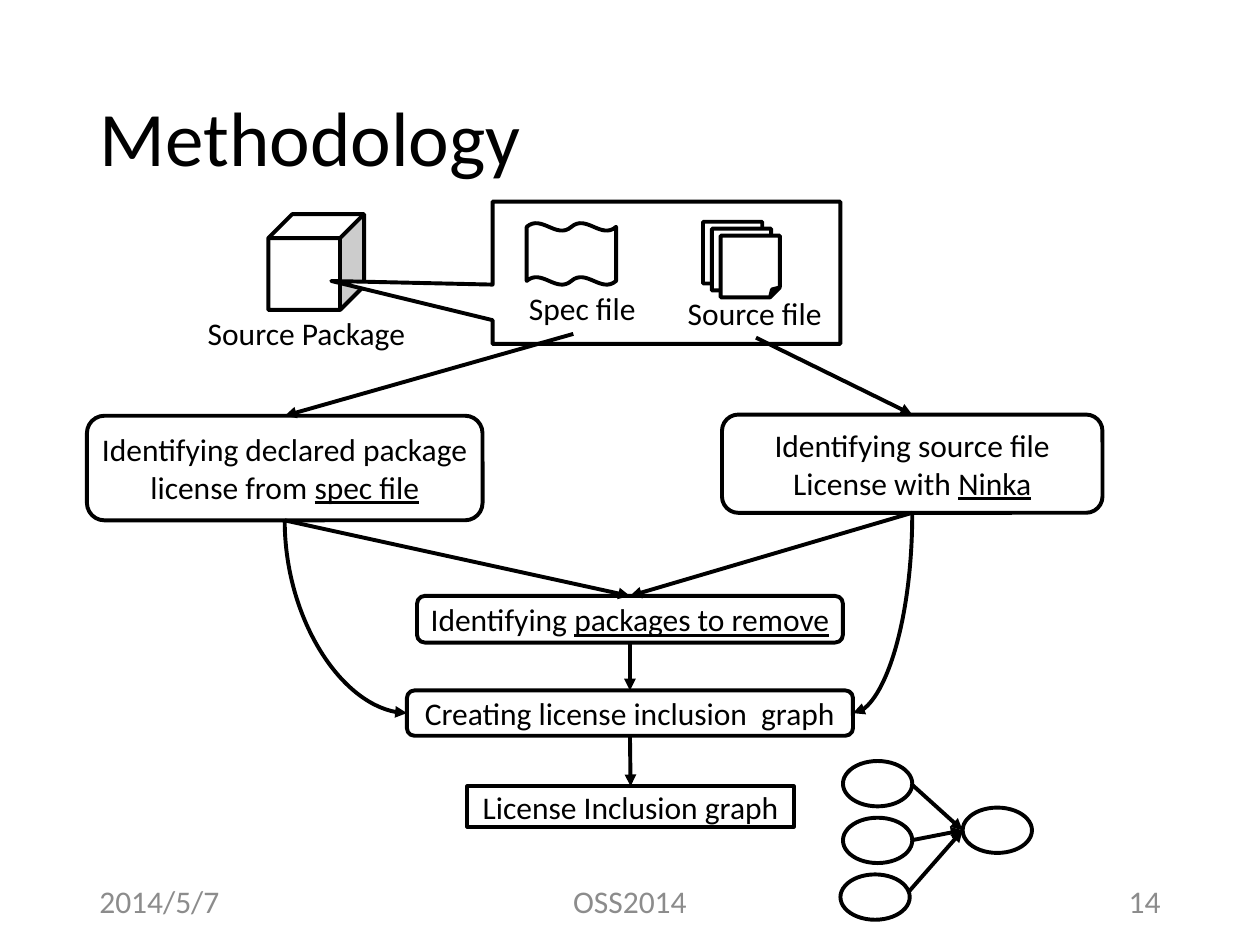
"""Builds the Methodology flow slide: from package files to a license inclusion graph."""
from lxml.etree import SubElement
from pptx import Presentation
from pptx.dml.color import RGBColor
from pptx.enum.shapes import MSO_CONNECTOR as CN, MSO_SHAPE as SH
from pptx.enum.text import MSO_ANCHOR, MSO_AUTO_SIZE, PP_ALIGN
from pptx.oxml.ns import qn
from pptx.util import Inches, Pt

FONT, BLACK, WHITE, GRAY = "Calibri", "000000", "FFFFFF", "8C8C8C"
LEFT, CENTER, RIGHT = PP_ALIGN.LEFT, PP_ALIGN.CENTER, PP_ALIGN.RIGHT
rgb = RGBColor.from_string

prs = Presentation()
prs.slide_width, prs.slide_height = Inches(10), Inches(7.5)
COL, ROW = prs.slide_width / 100, prs.slide_height / 75
slide = prs.slides.add_slide(prs.slide_layouts[5])
shapes = slide.shapes


def box(kind, place, lines=(), fill=WHITE, color=BLACK, align=CENTER):
    """Add a shape, or a text box if kind is None; text after an underscore is underlined."""
    x, y, w, h = place
    area = [int(v) for v in (x * COL, y * ROW, w * COL, h * ROW)]
    s = shapes.add_textbox(*area) if kind is None else shapes.add_shape(kind, *area)
    tf = s.text_frame
    tf.word_wrap, tf.vertical_anchor = True, MSO_ANCHOR.MIDDLE
    if kind is not None:
        s.shadow.inherit = False
        s.line.color.rgb, s.line.width = rgb(BLACK), Pt(2.25)
        tf.margin_left = tf.margin_right = Inches(0.07)
        tf.margin_top = tf.margin_bottom = Inches(0.04)
        if fill:
            s.fill.solid()
            s.fill.fore_color.rgb = rgb(fill)
        else:
            s.fill.background()
    for i, line in enumerate(lines):
        p = tf.add_paragraph() if i else tf.paragraphs[0]
        p.alignment = align
        p.font.name, p.font.size, p.font.color.rgb = FONT, Pt(18), rgb(color)
        for j, part in enumerate(line.split("_")):
            r = p.add_run()
            r.text = part
            if j:
                r.font.underline = True
    return s


def arrow(start, end, kind=CN.STRAIGHT):
    """Add an arrow between two grid points."""
    c = shapes.add_connector(kind, int(start[0] * COL), int(start[1] * ROW),
                             int(end[0] * COL), int(end[1] * ROW))
    c.line.color.rgb, c.line.width = rgb(BLACK), Pt(2.25)
    SubElement(c.line._get_or_add_ln(), qn("a:tailEnd"), type="triangle")
    SubElement(c._element.spPr, qn("a:effectLst"))
    return c


title = shapes.title
title.left, title.top = int(6.9 * COL), int(4 * ROW)
title.width, title.height = int(86.2 * COL), int(14.5 * ROW)
title.text_frame.text = "Methodology"
title.text_frame.vertical_anchor = MSO_ANCHOR.MIDDLE
p = title.text_frame.paragraphs[0]
p.alignment, p.line_spacing = LEFT, 0.9
p.font.name, p.font.size, p.font.color.rgb = FONT, Pt(44), rgb(BLACK)

for x, w, text, align in ((6.9, 22.5, "2014/5/7", LEFT), (33.1, 33.8, "OSS2014", CENTER),
                          (70.6, 22.5, "14", RIGHT)):
    box(None, (x, 69.5, w, 4), [text], color=GRAY, align=align)

box(SH.CUBE, (21.3, 17, 7.6, 7.6))
callout = box(SH.RECTANGULAR_CALLOUT, (39.1, 16, 27.6, 11.3))
callout.adjustments[0], callout.adjustments[1] = -0.964, 0.058
box(SH.DOUBLE_WAVE, (41.8, 17.7, 7.1, 4.9))
for i in range(3):
    box(SH.FOLDED_CORNER, (55.8 + 0.7 * i, 17.6 + 0.55 * i, 4.7, 4.9))

labels = []
for x, y, w, text in ((15.5, 24.4, 17.9, "Source Package"), (41, 22.4, 10.6, "Spec file"),
                      (53.6, 22.8, 12.8, "Source file")):
    s = box(None, (x, y, w, 4), [text], align=LEFT)
    s.text_frame.word_wrap = False
    s.text_frame.auto_size = MSO_AUTO_SIZE.SHAPE_TO_FIT_TEXT
    labels.append(s)

ROUND = SH.ROUNDED_RECTANGLE
declared = box(ROUND, (6.9, 33, 31.4, 8.3),
               ["Identifying declared package license from _spec file"])
source = box(ROUND, (57.3, 32.9, 30.2, 7.8),
             ["Identifying source file", "License with _Ninka"])
remove = box(ROUND, (33.1, 47.3, 33.8, 3.7), ["Identifying _packages to remove"])
create = box(ROUND, (32.3, 54.8, 35.4, 3.6), ["Creating license inclusion  graph"])
graph = box(SH.RECTANGLE, (37.1, 62.4, 25.9, 3.2), ["License Inclusion graph"])

arrow((45.5, 26.5), (22.6, 33)).end_connect(declared, 0)
for a, b in ((labels[2], source), (declared, remove), (source, remove),
             (remove, create), (create, graph)):
    c = arrow((50, 50), (50, 60))
    c.begin_connect(a, 2)
    c.end_connect(b, 0)

for start, end, turn in (((35.1, 44.1), (19.8, 53.8), 270), ((62.1, 46.3), (78, 51), 90)):
    c = arrow(start, end, CN.CURVE)
    c._element.spPr.find(qn("a:prstGeom")).set("prst", "curvedConnector2")
    c._element.spPr.find(qn("a:xfrm")).set("rot", str(turn * 60000))

for x, y, tip_y in ((66.9, 60.4, 62.2), (66.9, 64.9, 66.7), (66.7, 69.4, 70.8)):
    box(SH.OVAL, (x, y, 5.5, 3.6), fill=None)
    arrow((x + 5.4, tip_y), (76.4, 65.9))
box(SH.OVAL, (76.4, 64.1, 5.5, 3.6), fill=None)

prs.save("out.pptx")
